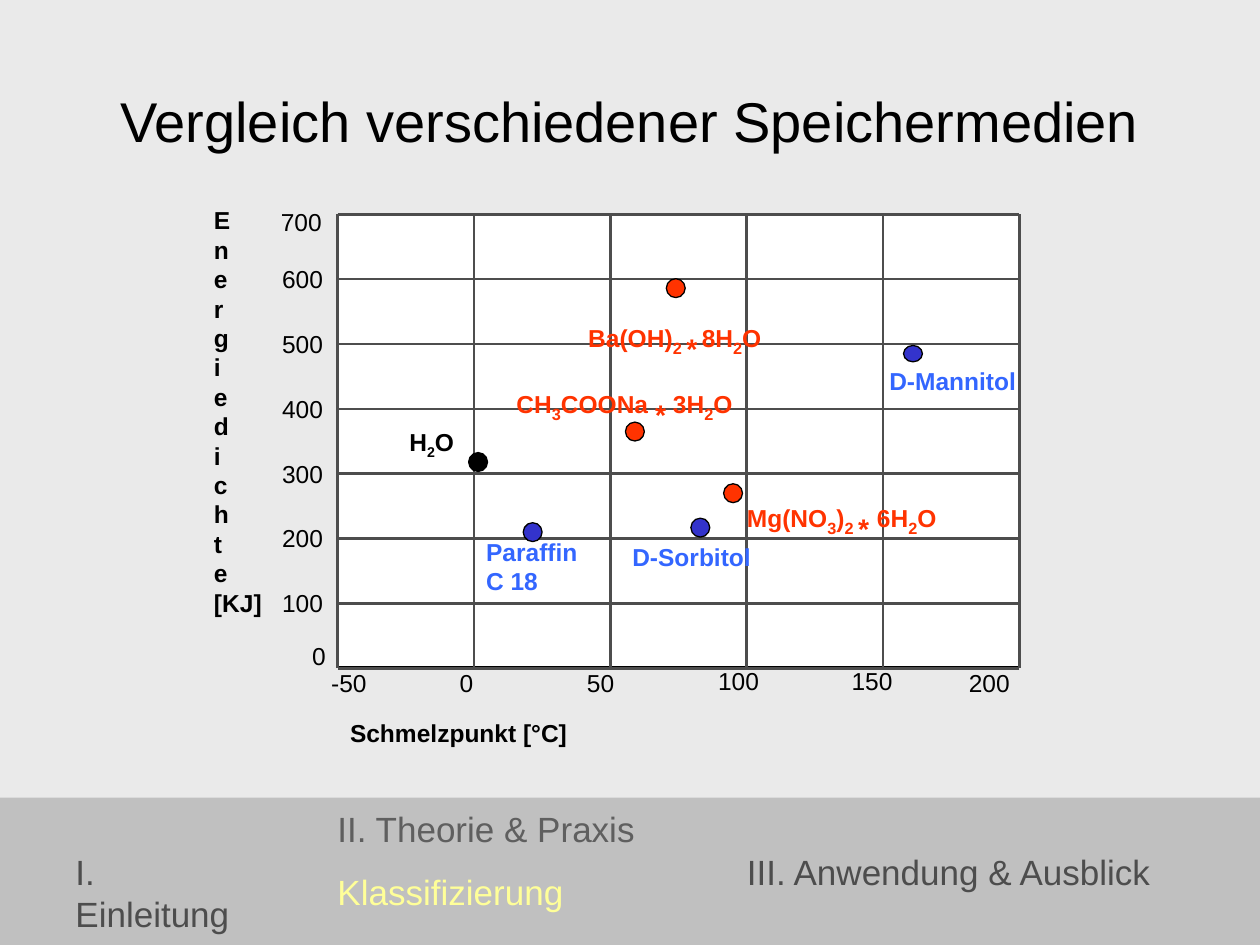
from pptx import Presentation, util as u
from pptx.dml.color import RGBColor
from pptx.enum import shapes, text
from pptx.oxml import parse_xml
from pptx.oxml.ns import nsdecls

BACKGROUND = RGBColor(0xEA, 0xEA, 0xEA)
BAND = RGBColor(0xC0, 0xC0, 0xC0)
WHITE = RGBColor(0xFF, 0xFF, 0xFF)
BLACK = RGBColor(0, 0, 0)
GRID = RGBColor(0x4D, 0x4D, 0x4D)
MUTED = RGBColor(0x5F, 0x5F, 0x5F)
YELLOW = RGBColor(0xFF, 0xFF, 0x99)
ORANGE = RGBColor(0xFF, 0x33, 0x00)
BLUE = RGBColor(0x33, 0x66, 0xFF)
INDIGO = RGBColor(0x33, 0x33, 0xCC)

# Plot grid: 5 columns of 50 °C, 7 rows of 100 KJ
LEFT, TOP, COLUMN, ROW = 2.68, 1.7, 1.08, 0.515
COLUMNS, ROWS = 5, 7
RIGHT, BOTTOM = 8.09, TOP + ROWS * ROW

deck = Presentation()
deck.slide_width, deck.slide_height = u.Inches(10), u.Inches(7.5)
page = deck.slides.add_slide(deck.slide_layouts[6])
page.background.fill.solid()
page.background.fill.fore_color.rgb = BACKGROUND


def add_shape(kind, area, fill, line=None):
    shape = page.shapes.add_shape(kind, *map(u.Inches, area))
    shape.shadow.inherit = False
    shape.fill.solid()
    shape.fill.fore_color.rgb = fill
    if line is None:
        shape.line.fill.background()
    else:
        shape.line.color.rgb = line
        shape.line.width = u.Pt(0.75)


def add_text(area, paragraphs, color=BLACK, size=14, bold=False, wrap=True,
             frame_format=None, para_format=None):
    """Each paragraph is a string or a list of (text, size, lowered) spans."""
    box = page.shapes.add_textbox(*map(u.Inches, area))
    box.text_frame.word_wrap = wrap
    for name, value in (frame_format or {}).items():
        setattr(box.text_frame, name, value)
    for index, content in enumerate(paragraphs):
        para = box.text_frame.paragraphs[0] if index == 0 else box.text_frame.add_paragraph()
        for name, value in (para_format or {}).items():
            setattr(para, name, value)
        spans = [(content, size, False)] if isinstance(content, str) else content
        for words, points, lowered in spans:
            span = para.add_run()
            span.text = words
            for name, value in {"name": "Arial", "size": u.Pt(points), "bold": bold}.items():
                setattr(span.font, name, value)
            span.font.color.rgb = color
            if lowered:
                span._r.get_or_add_rPr().set("baseline", "-25000")
    return box


# Footer band with the chapters
add_shape(shapes.MSO_SHAPE.RECTANGLE, (0, 6.33, 10, 1.17), BAND)
add_text((0.5, 6.7, 1.65, 0.43), ["I. Einleitung"], GRID, 20, wrap=False)
chapter = add_text((2.58, 6.19, 2.56, 1.1), ["II. Theorie & Praxis", "Klassifizierung"],
                   MUTED, 20, wrap=False, para_format={"line_spacing": 1.5})
chapter.text_frame.paragraphs[1].runs[0].font.color.rgb = YELLOW
add_text((5.83, 6.7, 3.43, 0.43), ["III. Anwendung & Ausblick"], GRID, 20, wrap=False)

# Title
add_text((0.75, 0.33, 8.5, 1.25), ["Vergleich verschiedener Speichermedien"], size=32,
         frame_format={"vertical_anchor": text.MSO_ANCHOR.MIDDLE},
         para_format={"alignment": text.PP_ALIGN.CENTER})

# Plot area and grid lines
add_shape(shapes.MSO_SHAPE.RECTANGLE, (2.67, 1.71, 5.42, 3.58), WHITE, BLACK)
step = (RIGHT - LEFT) / COLUMNS
grid_lines = [(LEFT + i * step, TOP, LEFT + i * step, BOTTOM) for i in range(COLUMNS + 1)]
grid_lines += [(LEFT, TOP + i * ROW, RIGHT, TOP + i * ROW) for i in range(ROWS + 1)]
for ends in grid_lines:
    line = page.shapes.add_connector(shapes.MSO_CONNECTOR.STRAIGHT, *map(u.Inches, ends))
    line.line.color.rgb = GRID
    line.line.width = u.Pt(1.5)
    line._element.spPr.append(parse_xml(f"<a:effectLst {nsdecls('a')}/>"))

# Axis labels
x_labels = {"-50": (2.53, 5.25), "0": (3.55, 5.25), "50": (4.56, 5.25),
            "100": (5.6, 5.24), "150": (6.66, 5.24), "200": (7.59, 5.25)}
for label, (left, top) in x_labels.items():
    add_text((left, top, 0.72, 0.34), [label])
for row in range(1, ROWS):
    add_text((2.14, TOP + row * ROW - 0.17, 0.72, 0.34), [str(100 * (ROWS - row))])
add_text((2.13, 1.59, 0.72, 0.34), ["700"])
add_text((2.38, 5.04, 0.54, 0.34), ["0"])
add_text((2.68, 5.65, 2.34, 0.52), ["Schmelzpunkt [°C]"], bold=True)
add_text((1.6, 1.58, 0.9, 3.95), [*"Energiedichte", "[KJ]"], bold=True)

# Data points: melting point, energy density, colour, marker height
points = [(1.5, 318, BLACK, 0.15), (83, 217, INDIGO, 0.15), (161, 485, INDIGO, 0.13),
          (21.5, 210, INDIGO, 0.15), (59, 365, ORANGE, 0.15), (95, 270, ORANGE, 0.15),
          (74, 586, ORANGE, 0.15)]
for melting, energy, color, height in points:
    x = LEFT + (melting + 50) / 50 * step
    y = BOTTOM - energy / 100 * ROW
    add_shape(shapes.MSO_SHAPE.OVAL, (x - 0.075, y - height / 2, 0.15, height), color, BLACK)

# Substance names
two, three, end = ("2", 16, True), ("3", 16, True), ("O", 14, False)
substances = [
    ((3.15, 3.34, 0.9, 0.52), [[("H", 14, False), ("2", 14, True), end]], BLACK),
    ((3.76, 4.21, 1.26, 0.69), ["Paraffin", "C 18"], BLUE),
    ((4.92, 4.25, 1.26, 0.45), ["D-Sorbitol"], BLUE),
    ((6.96, 2.86, 1.44, 0.3), ["D-Mannitol"], BLUE),
    ((5.83, 3.75, 1.8, 0.58), [[("Mg(NO", 14, False), three, (")", 14, False), ("2 ", 16, True),
                                ("* ", 28, True), ("6H", 14, False), two, end]], ORANGE),
    ((4, 2.84, 1.98, 0.51), [[("CH", 14, False), three, ("COONa ", 14, False), ("*", 28, True),
                              (" 3H", 14, False), two, end]], ORANGE),
    ((4.57, 2.32, 1.76, 0.51), [[("Ba(OH)", 14, False), ("2 ", 16, True), ("*", 28, True),
                                 (" ", 16, True), ("8H", 14, False), two, end]], ORANGE),
]
for area, paragraphs, color in substances:
    add_text(area, paragraphs, color, bold=True)

deck.save("out.pptx")
